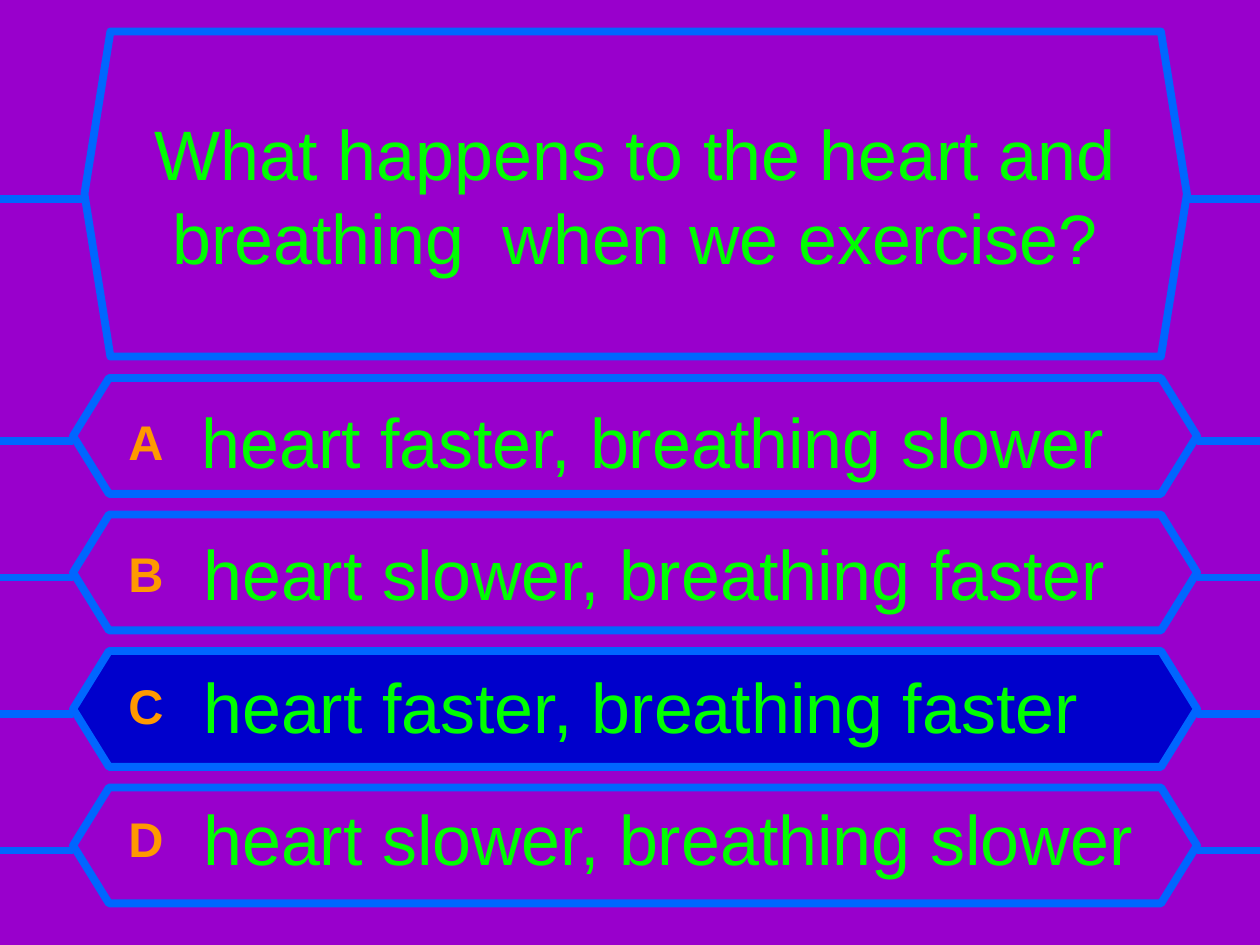
from dataclasses import dataclass

from lxml import etree
from pptx import Presentation
from pptx.dml.color import RGBColor
from pptx.enum.shapes import MSO_CONNECTOR, MSO_SHAPE
from pptx.enum.text import MSO_ANCHOR, PP_ALIGN
from pptx.oxml.ns import qn
from pptx.util import Inches, Pt

HEXAGON = MSO_SHAPE.HEXAGON
STRAIGHT = MSO_CONNECTOR.STRAIGHT
CENTER = PP_ALIGN.CENTER
MIDDLE = MSO_ANCHOR.MIDDLE
TITLE_ONLY = 5


@dataclass(frozen=True)
class Theme:
    """Colours, font and type sizes of the quiz slide."""
    purple: RGBColor = RGBColor(0x99, 0x00, 0xCC)
    navy: RGBColor = RGBColor(0x00, 0x00, 0xCC)
    blue: RGBColor = RGBColor(0x00, 0x66, 0xFF)
    green: RGBColor = RGBColor(0x00, 0xFF, 0x00)
    orange: RGBColor = RGBColor(0xFF, 0x99, 0x00)
    font: str = "Arial"
    text: Pt = Pt(40)
    letter: Pt = Pt(48)
    gap: Pt = Pt(54)
    line: Pt = Pt(4.5)


THEME = Theme()
SLIDE_W, SLIDE_H = 10, 7.5
QUESTION = "What happens to the heart and breathing  when we exercise?"
ANSWERS = {
    "A": "heart faster, breathing slower",
    "B": "heart slower, breathing faster",
    "C": "heart faster, breathing faster",
    "D": "heart slower, breathing slower",
}
CORRECT = "C"
ROW_TOP, ROW_PITCH = 3, 3.25 / 3


def add_wire(s, x1, x2, y):
    """Draw a horizontal line at height y."""
    line = s.shapes.add_connector(
        STRAIGHT, Inches(x1), Inches(y), Inches(x2), Inches(y))
    line.line.color.rgb = THEME.blue
    line.line.width = THEME.line
    etree.SubElement(line.element.spPr, qn("a:effectLst"))


def add_panel(s, left, top, width, height, adj, fill, wire_y):
    """Draw a hexagon with a wire from each tip to the slide edge."""
    sp = s.shapes.add_shape(
        HEXAGON, Inches(left), Inches(top), Inches(width), Inches(height))
    sp.adjustments[0] = adj
    sp.shadow.inherit = False
    sp.fill.solid()
    sp.fill.fore_color.rgb = fill
    sp.line.color.rgb = THEME.blue
    sp.line.width = THEME.line
    add_wire(s, left, 0, wire_y)
    add_wire(s, SLIDE_W, left + width, wire_y)


def add_run(p, text, size, color, bold=False):
    """Add a formatted run and return it."""
    r = p.add_run()
    r.text = text
    r.font.name = THEME.font
    r.font.size = size
    r.font.color.rgb = color
    r.font.bold = bold
    return r


def set_title(s):
    """Place the question in the title, in front of its panel."""
    title = s.shapes.title
    title.left, title.top = Inches(0.83), Inches(0.42)
    title.width, title.height = Inches(8.42), Inches(2.25)
    tf = title.text_frame
    tf.vertical_anchor = MIDDLE
    p = tf.paragraphs[0]
    p.alignment = CENTER
    add_run(p, QUESTION, THEME.text, THEME.green)
    s.shapes.element.append(title.element)


def format_answer(p):
    """Give a paragraph a hanging indent and proportional space before."""
    pPr = p._p.get_or_add_pPr()
    pPr.set("marL", str(Inches(0.38)))
    pPr.set("indent", str(-Inches(0.38)))
    before = etree.SubElement(pPr, qn("a:spcBef"))
    etree.SubElement(before, qn("a:spcPct")).set("val", "20000")


def add_answers(s):
    """Write the lettered answers in one text box."""
    box = s.shapes.add_textbox(
        Inches(0.92), Inches(2.92), Inches(8.33), Inches(4.33))
    tf = box.text_frame
    tf.word_wrap = True
    for i, (letter, answer) in enumerate(ANSWERS.items()):
        p = tf.add_paragraph() if i else tf.paragraphs[0]
        format_answer(p)
        r = add_run(p, f"{letter} ", THEME.letter, THEME.orange, True)
        r._r.get_or_add_rPr().set("baseline", "10000")
        add_run(p, " ", THEME.gap, THEME.purple)
        add_run(p, answer, THEME.text, THEME.green)


def main():
    """Build and save the quiz slide."""
    prs = Presentation()
    prs.slide_width, prs.slide_height = Inches(SLIDE_W), Inches(SLIDE_H)
    s = prs.slides.add_slide(prs.slide_layouts[TITLE_ONLY])
    s.background.fill.solid()
    s.background.fill.fore_color.rgb = THEME.purple
    add_panel(s, 0.67, 0.25, 8.75, 2.58, 0.08, THEME.purple, 1.58)
    for i, letter in enumerate(ANSWERS):
        top = ROW_TOP + i * ROW_PITCH
        fill = THEME.navy if letter == CORRECT else THEME.purple
        add_panel(s, 0.58, top, 8.92, 0.92, 0.31, fill, top + 0.5)
    set_title(s)
    add_answers(s)
    prs.save("out.pptx")


if __name__ == "__main__":
    main()
